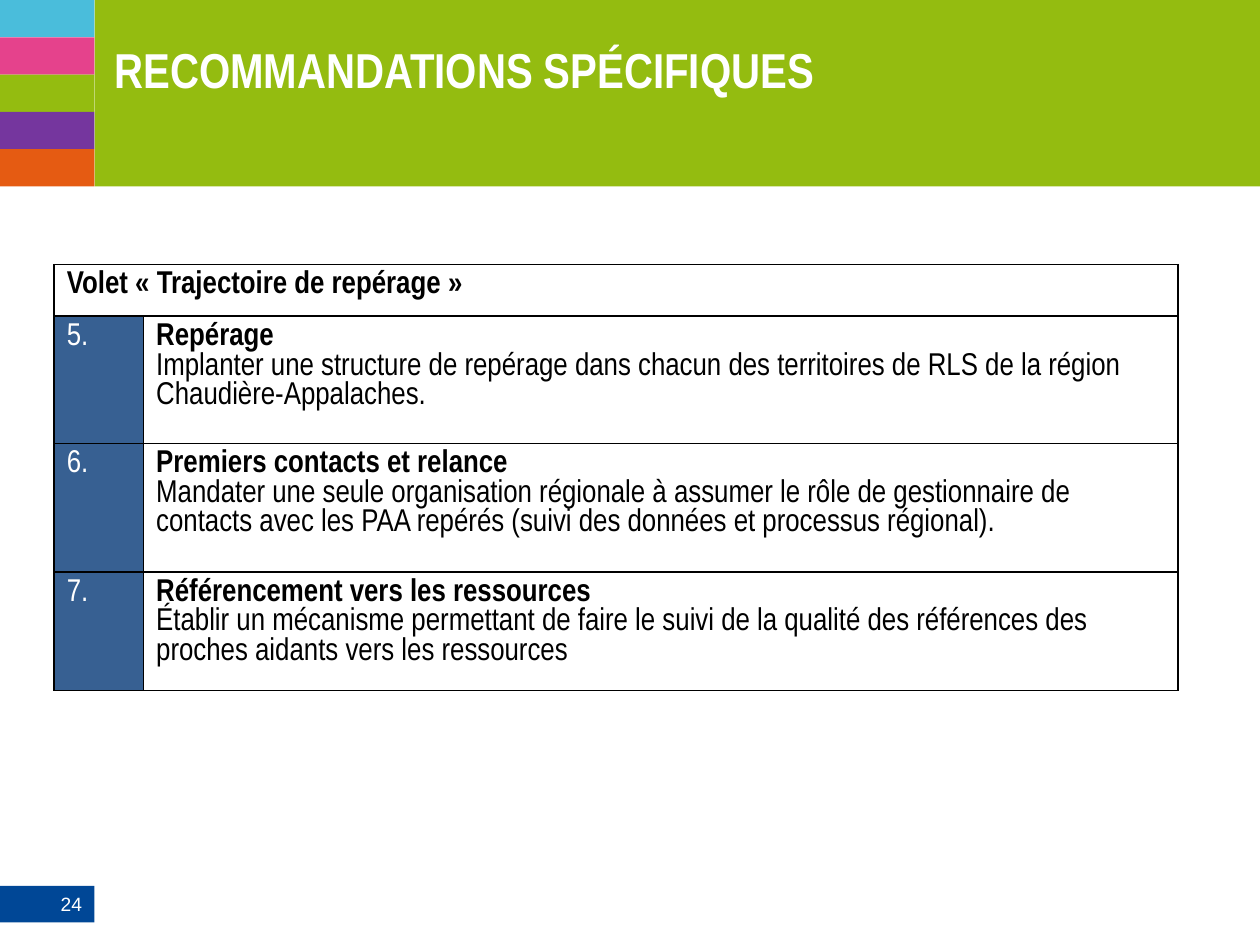
from lxml import etree
from pptx import Presentation
from pptx.dml.color import RGBColor
from pptx.enum.shapes import MSO_SHAPE
from pptx.enum.text import MSO_ANCHOR, PP_ALIGN
from pptx.oxml.ns import qn
from pptx.util import Inches, Pt

RECTANGLE = MSO_SHAPE.RECTANGLE
TOP, MIDDLE = MSO_ANCHOR.TOP, MSO_ANCHOR.MIDDLE
LEFT, RIGHT = PP_ALIGN.LEFT, PP_ALIGN.RIGHT
WIDTH, HEIGHT = 10, 7.5
SIDEBAR = 0.75
BANNER = 1.48
STRIPES = ["4ABDDB", "E5428C", "94BC10", "75369E", "E55B12"]
COLUMNS = [0.71, 8.21]
ROWS = [0.41, 1.01, 1.02, 0.94]
HEADING = "Volet «\u00a0Trajectoire de repérage\u00a0»"
RECOMMENDATIONS = [
    ("5.", "Repérage",
     "Implanter une structure de repérage dans chacun des territoires de RLS "
     "de la région Chaudière-Appalaches."),
    ("6.", "Premiers contacts et relance",
     "Mandater une seule organisation régionale à assumer le rôle de gestionnaire de "
     "contacts avec les PAA repérés (suivi des données et processus régional)."),
    ("7.", "Référencement vers les ressources",
     "Établir un mécanisme permettant de faire le suivi de la qualité des références "
     "des proches aidants vers les ressources"),
]


def color(value):
    return RGBColor.from_string(value)


class SlideBuilder:
    """Holds the style and the current slide, and adds each kind of element."""

    font = "Arial Narrow"
    body_size = 18
    ink, paper, number_fill = "000000", "FFFFFF", "376092"

    def __init__(self, presentation):
        self.slide = presentation.slides.add_slide(presentation.slide_layouts[5])

    def format(self, paragraph, size, ink, bold=False, font=None, align=LEFT):
        paragraph.alignment = align
        for run in paragraph.runs:
            run.font.name = font or self.font
            run.font.size = Pt(size)
            run.font.bold = bold
            run.font.color.rgb = color(ink)

    def block(self, left, top, width, height, fill):
        shape = self.slide.shapes.add_shape(
            RECTANGLE, Inches(left), Inches(top), Inches(width), Inches(height))
        shape.shadow.inherit = False
        shape.fill.solid()
        shape.fill.fore_color.rgb = color(fill)
        shape.line.fill.background()
        return shape

    def page_number(self, text):
        frame = self.block(0, 7.03, SIDEBAR, 0.29, "004796").text_frame
        frame.text = text
        frame.vertical_anchor = MIDDLE
        self.format(frame.paragraphs[0], 11, self.paper, font="Arial", align=RIGHT)

    def title(self, text):
        title = self.slide.shapes.title
        title.left, title.top = Inches(0.91), Inches(0.21)
        title.width, title.height = Inches(5.83), Inches(0.85)
        frame = title.text_frame
        frame.text = text
        frame.word_wrap = True
        frame.vertical_anchor = TOP
        frame.margin_left = frame.margin_right = frame.margin_bottom = 0
        frame.margin_top = Inches(0.1)
        self.format(frame.paragraphs[0], 28, self.paper, bold=True)

    def cell(self, cell, lines, ink, bold_first, fill=None):
        cell.text_frame.text = "\n".join(lines)
        for index, paragraph in enumerate(cell.text_frame.paragraphs):
            self.format(paragraph, self.body_size, ink, bold_first and index == 0)
        self.borders(cell)
        if fill:
            cell.fill.solid()
            cell.fill.fore_color.rgb = color(fill)
        else:
            cell.fill.background()

    def borders(self, cell):
        properties = cell._tc.get_or_add_tcPr()
        for side in ("a:lnL", "a:lnR", "a:lnT", "a:lnB"):
            line = etree.SubElement(properties, qn(side), w=str(Pt(1)))
            fill = etree.SubElement(line, qn("a:solidFill"))
            etree.SubElement(fill, qn("a:srgbClr"), val=self.ink)

    def table(self, left, top, heading, records):
        table = self.slide.shapes.add_table(
            len(ROWS), len(COLUMNS), Inches(left), Inches(top),
            Inches(sum(COLUMNS)), Inches(sum(ROWS))).table
        for column, width in zip(table.columns, COLUMNS):
            column.width = Inches(width)
        for row, height in zip(table.rows, ROWS):
            row.height = Inches(height)
        table.cell(0, 0).merge(table.cell(0, 1))
        self.cell(table.cell(0, 0), [heading], self.ink, True)
        self.cell(table.cell(0, 1), [], self.ink, False)
        for row, (number, *lines) in enumerate(records, start=1):
            self.cell(table.cell(row, 0), [number], self.paper, False, self.number_fill)
            self.cell(table.cell(row, 1), lines, self.ink, True)


def main():
    presentation = Presentation()
    presentation.slide_width, presentation.slide_height = Inches(WIDTH), Inches(HEIGHT)
    builder = SlideBuilder(presentation)
    builder.block(SIDEBAR, 0, WIDTH - SIDEBAR, BANNER, "94BC10")
    builder.page_number("24")
    stripe_height = BANNER / len(STRIPES)
    for index, fill in enumerate(STRIPES):
        builder.block(0, index * stripe_height, SIDEBAR, stripe_height, fill)
    shapes = builder.slide.shapes
    shapes._spTree.append(shapes.title._element)
    builder.title("RECOMMANDATIONS SPÉCIFIQUES")
    builder.table(0.43, 2.1, HEADING, RECOMMENDATIONS)
    presentation.save("out.pptx")


if __name__ == "__main__":
    main()
